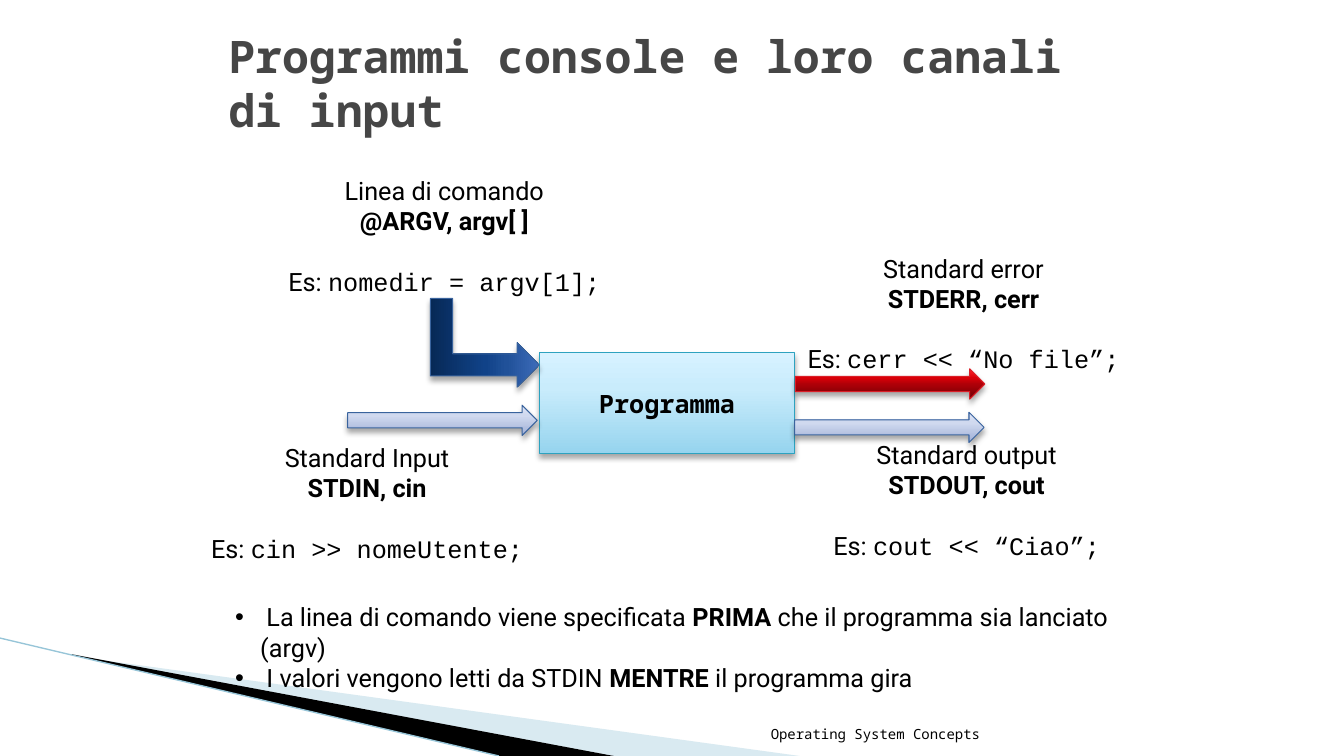
from dataclasses import dataclass

from lxml.etree import SubElement
from pptx import Presentation
from pptx.dml.color import RGBColor
from pptx.enum.shapes import MSO_CONNECTOR as Connector, MSO_SHAPE as Shape
from pptx.enum.text import MSO_ANCHOR as Anchor, MSO_AUTO_SIZE as AutoSize, PP_ALIGN as Align
from pptx.oxml.ns import qn
from pptx.util import Inches, Pt

COLUMNS, ROWS = 40, 30


@dataclass(frozen=True)
class Theme:
    ink: str = "000000"
    heading: str = "464646"
    pale: str = "A0CBDC"
    edge: str = "97C5D8"
    box_line: str = "2DA2BF"
    blue_line: str = "39639D"
    red_line: str = "DA1F28"
    box_fill: tuple = ((0, "96D4EE"), (65, "C9ECFC"), (100, "D7F2FF"))
    navy_fill: tuple = ((0, "072956"), (50, "104288"), (70, "205199"), (100, "3D6BB9"))
    light_fill: tuple = ((0, "9FAFD6"), (65, "D0D9EF"), (100, "DCE3F6"))
    red_fill: tuple = ((0, "6D0005"), (50, "B00008"), (70, "DA0008"), (100, "FF2429"))
    mono: str = "Noto Sans Mono"
    sans: str = "Roboto"
    code: str = "Courier New"
    title_size: int = 32
    body_size: int = 18
    footer_size: int = 10


def write(paragraph, text, font, size, color, bold=False):
    run = paragraph.add_run()
    run.text = text
    run.font.name, run.font.size, run.font.bold = font, Pt(size), bold
    run.font.color.rgb = RGBColor.from_string(color)


def add_bullet(paragraph, hanging):
    properties = paragraph._p.get_or_add_pPr()
    properties.set("marL", str(hanging))
    properties.set("indent", str(-hanging))
    SubElement(properties, qn("a:buFont"), typeface="Arial")
    SubElement(properties, qn("a:buChar"), char="•")


def add_shadow(shape):
    shape.shadow.inherit = False
    effects = shape._element.spPr.find(qn("a:effectLst"))
    outer = SubElement(effects, qn("a:outerShdw"), blurRad=str(Pt(4)), dist=str(Pt(3)),
                       dir="5400000", algn="ctr", rotWithShape="0")
    black = SubElement(outer, qn("a:srgbClr"), val="000000")
    SubElement(black, qn("a:alpha"), val="35000")


def fill_upward(shape, stops):
    """Fill with a gradient that runs from the bottom to the top."""
    shape.fill.gradient()
    shape.fill.gradient_angle = 90
    stop_list = shape._element.spPr.find(qn("a:gradFill")).find(qn("a:gsLst"))
    for stop in list(stop_list):
        stop_list.remove(stop)
    for percent, color in stops:
        stop = SubElement(stop_list, qn("a:gs"), pos=str(percent * 1000))
        SubElement(stop, qn("a:srgbClr"), val=color)


class GridSlide:
    """A slide whose lengths are given in grid columns and rows."""

    def __init__(self, presentation, theme):
        self.theme = theme
        self.column = presentation.slide_width / COLUMNS
        self.row = presentation.slide_height / ROWS
        self.shapes = presentation.slides.add_slide(presentation.slide_layouts[6]).shapes

    def place(self, *lengths):
        """Turn alternating columns and rows into slide units."""
        units = (self.column, self.row)
        return [round(length * units[i % 2]) for i, length in enumerate(lengths)]

    def wedge(self, points, color, opacity=100):
        start, *rest = [self.place(*point) for point in points]
        builder = self.shapes.build_freeform(*start)
        builder.add_line_segments(rest, close=True)
        wedge = builder.convert_to_shape()
        wedge.shadow.inherit = False
        wedge.line.fill.background()
        wedge.fill.solid()
        wedge.fill.fore_color.rgb = RGBColor.from_string(color)
        if opacity < 100:
            tint = wedge._element.spPr.find(qn("a:solidFill")).find(qn("a:srgbClr"))
            SubElement(tint, qn("a:alpha"), val=str(opacity * 1000))

    def line(self, start, end, color, width):
        line = self.shapes.add_connector(Connector.STRAIGHT, *self.place(*start, *end))
        line.line.color.rgb = RGBColor.from_string(color)
        line.line.width = Pt(width)
        SubElement(line._element.spPr, qn("a:effectLst"))

    def block(self, kind, at, stops, line_color, rotation=0):
        block = self.shapes.add_shape(kind, *self.place(*at))
        block.rotation = rotation
        fill_upward(block, stops)
        block.line.color.rgb = RGBColor.from_string(line_color)
        block.line.width = Pt(0.75)
        add_shadow(block)
        return block

    def text_box(self, at, anchor=Anchor.TOP, wrap=True):
        frame = self.shapes.add_textbox(*self.place(*at)).text_frame
        frame.word_wrap, frame.vertical_anchor = wrap, anchor
        return frame

    def body(self, paragraph, text, **style):
        style = {"font": self.theme.sans, "size": self.theme.body_size,
                 "color": self.theme.ink, **style}
        write(paragraph, text, **style)

    def channel_label(self, at, channel, names, example):
        frame = self.text_box(at, wrap=False)
        frame.auto_size = AutoSize.SHAPE_TO_FIT_TEXT
        top, middle, bottom = frame.paragraphs[0], frame.add_paragraph(), frame.add_paragraph()
        for paragraph in (top, middle, bottom):
            paragraph.alignment = Align.CENTER
        self.body(top, channel)
        self.body(middle, names, bold=True)
        bottom.space_before = Pt(21.5)
        self.body(bottom, "Es: ")
        self.body(bottom, example, font=self.theme.code)

    def bullets(self, at, items):
        frame = self.text_box(at)
        for i, (before, strong, after) in enumerate(items):
            paragraph = frame.add_paragraph() if i else frame.paragraphs[0]
            add_bullet(paragraph, Inches(0.25))
            self.body(paragraph, before)
            self.body(paragraph, strong, bold=True)
            self.body(paragraph, after)


def main():
    presentation = Presentation()
    presentation.slide_width, presentation.slide_height = Inches(13.33), Inches(7.5)
    theme = Theme()
    slide = GridSlide(presentation, theme)

    slide.wedge([(2.19, 26.04), (23.8, 30), (18.25, 30), (2.19, 26)], theme.pale, opacity=40)
    slide.wedge([(2.13, 25.96), (18.27, 30), (14.88, 30), (2.16, 26)], theme.ink)
    slide.line((0, 25.32), (14.85, 30), theme.edge, 0.95)

    title = slide.text_box((6.5, 1.2, 27, 4.16), Anchor.MIDDLE)
    write(title.paragraphs[0], "Programmi console e loro canali di input",
          font=theme.mono, size=theme.title_size, color=theme.heading, bold=True)
    footer = slide.text_box((19.17, 28.04, 10.29, 1.6), Anchor.BOTTOM).paragraphs[0]
    footer.alignment = Align.RIGHT
    write(footer, "Operating System Concepts",
          font=theme.mono, size=theme.footer_size, color=theme.ink)

    program = slide.block(Shape.RECTANGLE, (16.05, 14, 7.6, 4), theme.box_fill, theme.box_line)
    program.text_frame.vertical_anchor = Anchor.MIDDLE
    program_name = program.text_frame.paragraphs[0]
    program_name.alignment = Align.CENTER
    slide.body(program_name, "Programma", font=theme.mono, bold=True)

    slide.block(Shape.BENT_UP_ARROW, (13.11, 11.44, 2.64, 4.32),
                theme.navy_fill, theme.blue_line, rotation=90)
    for left, top, stops, line_color in (
        (10.35, 16.08, theme.light_fill, theme.blue_line),
        (23.65, 16.36, theme.light_fill, theme.blue_line),
        (23.67, 14.64, theme.red_fill, theme.red_line),
    ):
        slide.block(Shape.RIGHT_ARROW, (left, top, 5.64, 1.2), stops, line_color)

    for left, top, width, channel, names, example in (
        (5.9, 17.36, 10.05, "Standard Input", "STDIN, cin", "cin >> nomeUtente;"),
        (24.42, 17.24, 8.7, "Standard output", "STDOUT, cout", "cout << “Ciao”;"),
        (23.65, 9.84, 10.05, "Standard error", "STDERR, cerr", "cerr << “No file”;"),
        (8.2, 6.76, 10.05, "Linea di comando", "@ARGV, argv[ ]", "nomedir = argv[1];"),
    ):
        slide.channel_label((left, top, width, 5.24), channel, names, example)

    slide.bullets((6.7, 23.68, 28.26, 2.84), [
        (" La linea di comando viene specificata ", "PRIMA ",
         "che il programma sia lanciato (argv)"),
        (" I valori vengono letti da STDIN ", "MENTRE", " il programma gira"),
    ])
    presentation.save("out.pptx")


if __name__ == "__main__":
    main()
